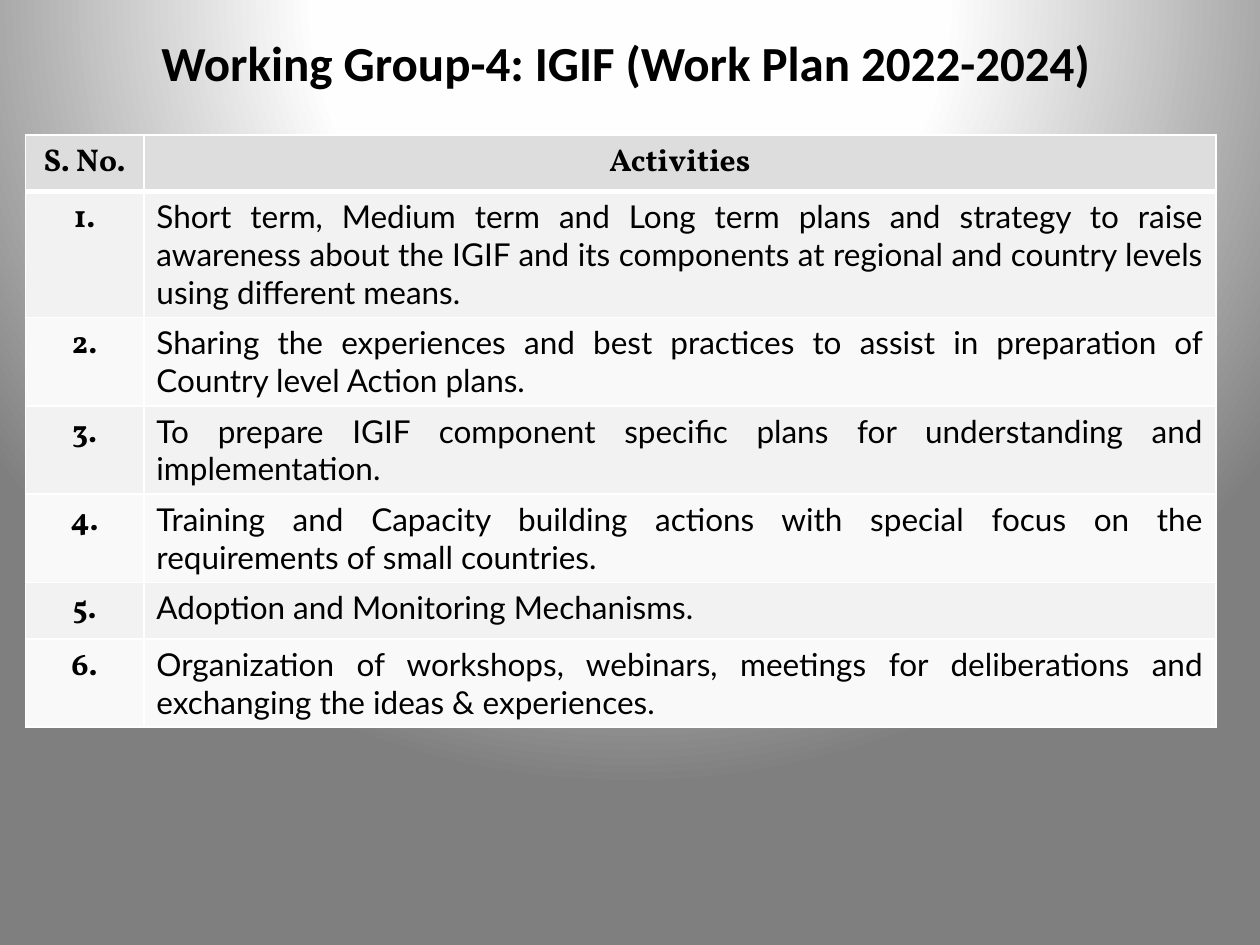
"""Build the Working Group-4 work plan slide with its table of activities."""
from dataclasses import dataclass

from lxml import etree
from pptx import Presentation
from pptx import oxml
from pptx.dml import color
from pptx.enum import text
from pptx import util as u

DRAWING = "http://schemas.openxmlformats.org/drawingml/2006/main"
PRESENTATION = "http://schemas.openxmlformats.org/presentationml/2006/main"


@dataclass(frozen=True)
class Theme:
    ink: str = "000000"
    border: str = "FFFFFF"
    header: str = "DDDDDD"
    bands: tuple = ("F2F2F2", "F9F9F9")
    glow: tuple = ((0, "FFFFFF"), (40, "FEFEFE"), (100, "7F7F7F"))
    title_font: str = "Calibri"
    label_font: str = "Vollkorn"
    body_font: str = "Lato"
    title_size: int = 28
    table_size: int = 18
    thin: int = 1
    thick: int = 3


@dataclass(frozen=True)
class Activity:
    wording: str
    lines: int = 2

    @property
    def height(self) -> u.Cm:
        return u.Cm(max(1.13, 0.25 + 0.76 * self.lines))


THEME = Theme()
HEADINGS = Activity("Activities", 1)
ACTIVITIES = (
    Activity("Short term, Medium term and Long term plans and strategy to raise awareness "
             "about the IGIF and its components at regional and country levels using "
             "different means.", 3),
    Activity("Sharing the experiences and best practices to assist in preparation of "
             "Country level Action plans."),
    Activity("To prepare IGIF component specific plans for understanding and implementation."),
    Activity("Training and Capacity building actions with special focus on the requirements "
             "of small countries."),
    Activity("Adoption and Monitoring Mechanisms.", 1),
    Activity("Organization of workshops, webinars, meetings for deliberations and exchanging "
             "the ideas & experiences."),
)


def style(paragraph, face: str, size: int, bold: bool, align) -> None:
    paragraph.alignment = align
    font = paragraph.font
    font.name, font.size, font.bold = face, u.Pt(size), bold
    font.color.rgb = color.RGBColor.from_string(THEME.ink)


def paint_background(slide) -> None:
    stops = "".join(f'<a:gs pos="{at * 1000}"><a:srgbClr val="{tone}"/></a:gs>'
                    for at, tone in THEME.glow)
    slide.element.cSld.insert(0, oxml.parse_xml(
        f'<p:bg xmlns:p="{PRESENTATION}" xmlns:a="{DRAWING}"><p:bgPr>'
        f'<a:gradFill rotWithShape="1"><a:gsLst>{stops}</a:gsLst><a:path path="circle">'
        '<a:fillToRect l="50000" t="-80000" r="50000" b="180000"/></a:path></a:gradFill>'
        '<a:effectLst/></p:bgPr></p:bg>'))


def add_title(slide, wording: str) -> None:
    title = slide.shapes.title
    title.left, title.top = u.Cm(0.71), u.Cm(0.53)
    title.width, title.height = u.Cm(23.8), u.Cm(2.34)
    frame = title.text_frame
    frame.text = wording
    frame.vertical_anchor = text.MSO_ANCHOR.TOP
    style(frame.paragraphs[0], THEME.title_font, THEME.title_size, True,
          text.PP_ALIGN.CENTER)


def set_borders(cell, top: int, bottom: int) -> None:
    properties = cell._tc.get_or_add_tcPr()
    widths = {"lnL": THEME.thin, "lnR": THEME.thin, "lnT": top, "lnB": bottom}
    for place, (side, width) in enumerate(widths.items()):
        properties.insert(place, etree.fromstring(
            f'<a:{side} xmlns:a="{DRAWING}" w="{u.Pt(width)}"><a:solidFill>'
            f'<a:srgbClr val="{THEME.border}"/></a:solidFill></a:{side}>'))


def fill_cell(cell, wording: str, tone: str, row: int, label: bool) -> None:
    cell.text = wording
    cell.fill.solid()
    cell.fill.fore_color.rgb = color.RGBColor.from_string(tone)
    set_borders(cell, THEME.thick if row == 1 else THEME.thin,
                THEME.thick if row == 0 else THEME.thin)
    style(cell.text_frame.paragraphs[0], THEME.label_font if label else THEME.body_font,
          THEME.table_size, label,
          text.PP_ALIGN.CENTER if label else text.PP_ALIGN.JUSTIFY)


def add_activities(slide) -> None:
    entries = (HEADINGS, *ACTIVITIES)
    widths = (u.Cm(2.39), u.Cm(21.61))
    grid = slide.shapes.add_table(len(entries), len(widths), u.Cm(0.51), u.Cm(2.72),
                                  sum(widths), sum(e.height for e in entries)).table
    for column, width in zip(grid.columns, widths):
        column.width = width
    for row, entry in enumerate(entries):
        grid.rows[row].height = entry.height
        tone = THEME.bands[(row - 1) % 2] if row else THEME.header
        number = f"{row}." if row else "S. No."
        fill_cell(grid.cell(row, 0), number, tone, row, True)
        fill_cell(grid.cell(row, 1), entry.wording, tone, row, row == 0)


def main() -> None:
    deck = Presentation()
    deck.slide_width, deck.slide_height = u.Cm(25.4), u.Cm(19.05)
    slide = deck.slides.add_slide(deck.slide_layouts.get_by_name("Title Only"))
    paint_background(slide)
    add_title(slide, "Working Group-4: IGIF (Work Plan 2022-2024)")
    add_activities(slide)
    deck.save("out.pptx")


if __name__ == "__main__":
    main()
